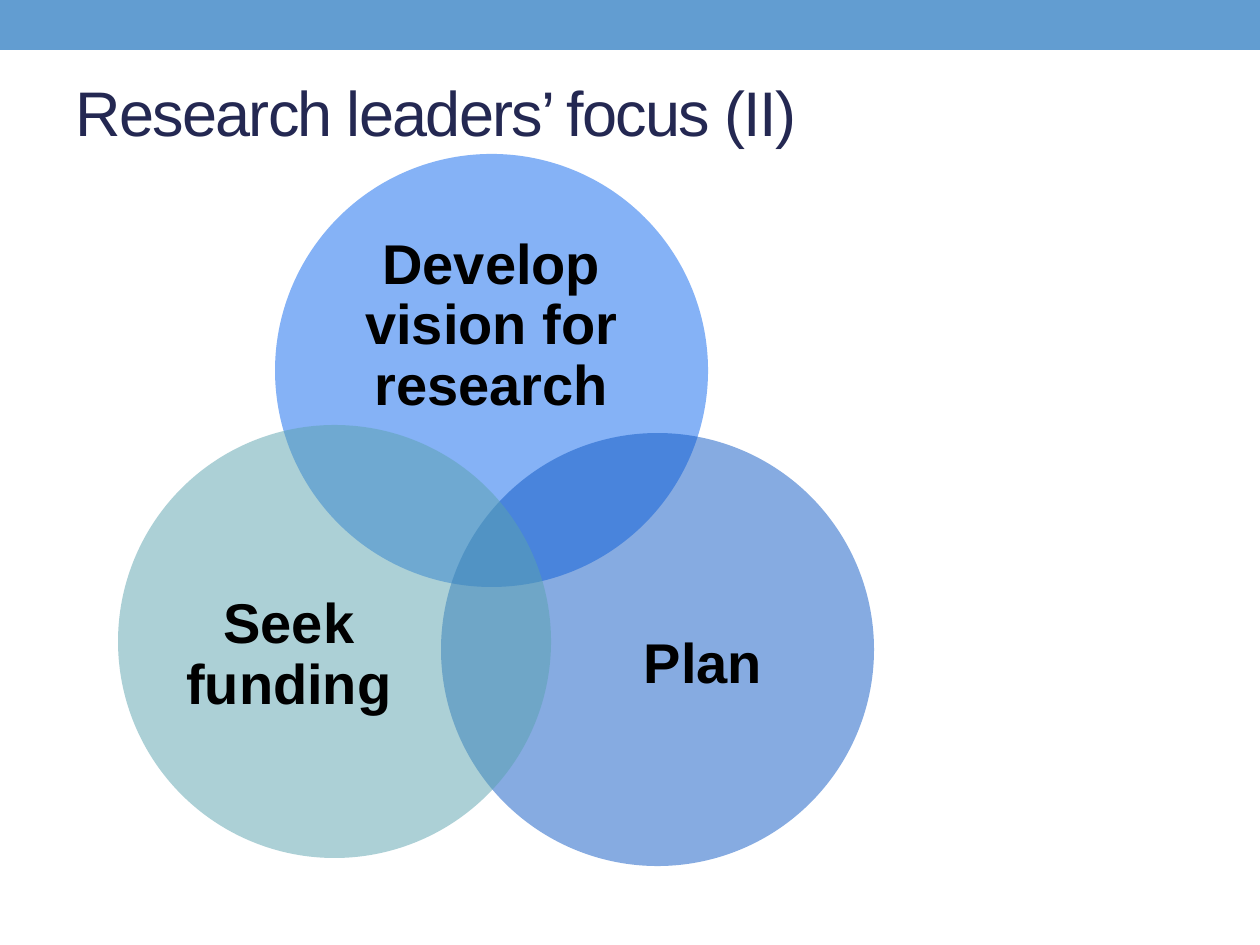
from lxml.etree import SubElement
from pptx import Presentation
from pptx.dml.color import RGBColor
from pptx.enum.shapes import MSO_SHAPE
from pptx.enum.text import MSO_ANCHOR, MSO_AUTO_SIZE, PP_ALIGN
from pptx.oxml.ns import qn
from pptx.util import Pt

EMU_PER_PX = 914400 / 126
SLIDE_WIDTH, SLIDE_HEIGHT = 1260, 945
DIAMETER = 433

BAND = RGBColor(0x62, 0x9D, 0xD1)
NAVY = RGBColor(0x24, 0x28, 0x52)
BLACK = RGBColor(0x00, 0x00, 0x00)
SKY = RGBColor(0x85, 0xB2, 0xF6)
COBALT = RGBColor(0x0E, 0x58, 0xC4)
TEAL = RGBColor(0x5A, 0xA2, 0xAE)

TITLE_FONT = {"name": "Arial", "size": Pt(36), "bold": False}
LABEL_FONT = {"name": "Arial", "size": Pt(32), "bold": True}
TITLE_FRAME = {"word_wrap": True, "auto_size": MSO_AUTO_SIZE.NONE,
               "vertical_anchor": MSO_ANCHOR.TOP, "margin_top": 0}
LABEL_FRAME = {"word_wrap": True, "auto_size": MSO_AUTO_SIZE.NONE,
               "vertical_anchor": MSO_ANCHOR.MIDDLE,
               "margin_left": 0, "margin_top": 0,
               "margin_right": 0, "margin_bottom": 0}

VENN = [
    ("Develop vision for research", SKY, None, (275, 154), (333, 229, 317, 195)),
    ("Plan", COBALT, 50, (441, 433), (573, 546, 260, 238)),
    ("Seek funding", TEAL, 50, (118, 425), (159, 537, 260, 238)),
]


def px(length):
    return round(length * EMU_PER_PX)


def set_format(target, values):
    for attribute, value in values.items():
        setattr(target, attribute, value)


class VennSlide:
    def __init__(self, deck):
        self.slide = deck.slides.add_slide(deck.slide_layouts[5])

    def fill_text(self, frame, text, frame_format, font_format, color, paragraph_format):
        set_format(frame, frame_format)
        paragraph = frame.paragraphs[0]
        set_format(paragraph, paragraph_format)
        run = paragraph.add_run()
        run.text = text
        set_format(run.font, font_format)
        run.font.color.rgb = color
        return run

    def title(self, text, box):
        heading = self.slide.shapes.title
        set_format(heading, dict(zip(("left", "top", "width", "height"), map(px, box))))
        run = self.fill_text(heading.text_frame, text, TITLE_FRAME, TITLE_FONT, NAVY,
                             {"alignment": PP_ALIGN.LEFT})
        run.font._element.set("spc", "-100")

    def shape(self, preset, box, color, opacity=None):
        figure = self.slide.shapes.add_shape(preset, *map(px, box))
        figure.shadow.inherit = False
        figure.fill.solid()
        figure.fill.fore_color.rgb = color
        figure.line.fill.background()
        if opacity is not None:
            tint = figure._element.spPr.find(qn("a:solidFill"))[0]
            SubElement(tint, qn("a:alpha")).set("val", str(opacity * 1000))

    def label(self, text, box):
        caption = self.slide.shapes.add_textbox(*map(px, box))
        self.fill_text(caption.text_frame, text, LABEL_FRAME, LABEL_FONT, BLACK,
                       {"alignment": PP_ALIGN.CENTER, "line_spacing": 0.9})


def main():
    deck = Presentation()
    deck.slide_width, deck.slide_height = px(SLIDE_WIDTH), px(SLIDE_HEIGHT)
    focus = VennSlide(deck)
    focus.shape(MSO_SHAPE.RECTANGLE, (0, 0, SLIDE_WIDTH, 50), BAND)
    focus.title("Research leaders’ focus (II)", (63, 73, 1134, 136))
    for text, color, opacity, corner, label_box in VENN:
        focus.shape(MSO_SHAPE.OVAL, (*corner, DIAMETER, DIAMETER), color, opacity)
        focus.label(text, label_box)
    deck.save("out.pptx")


if __name__ == "__main__":
    main()
